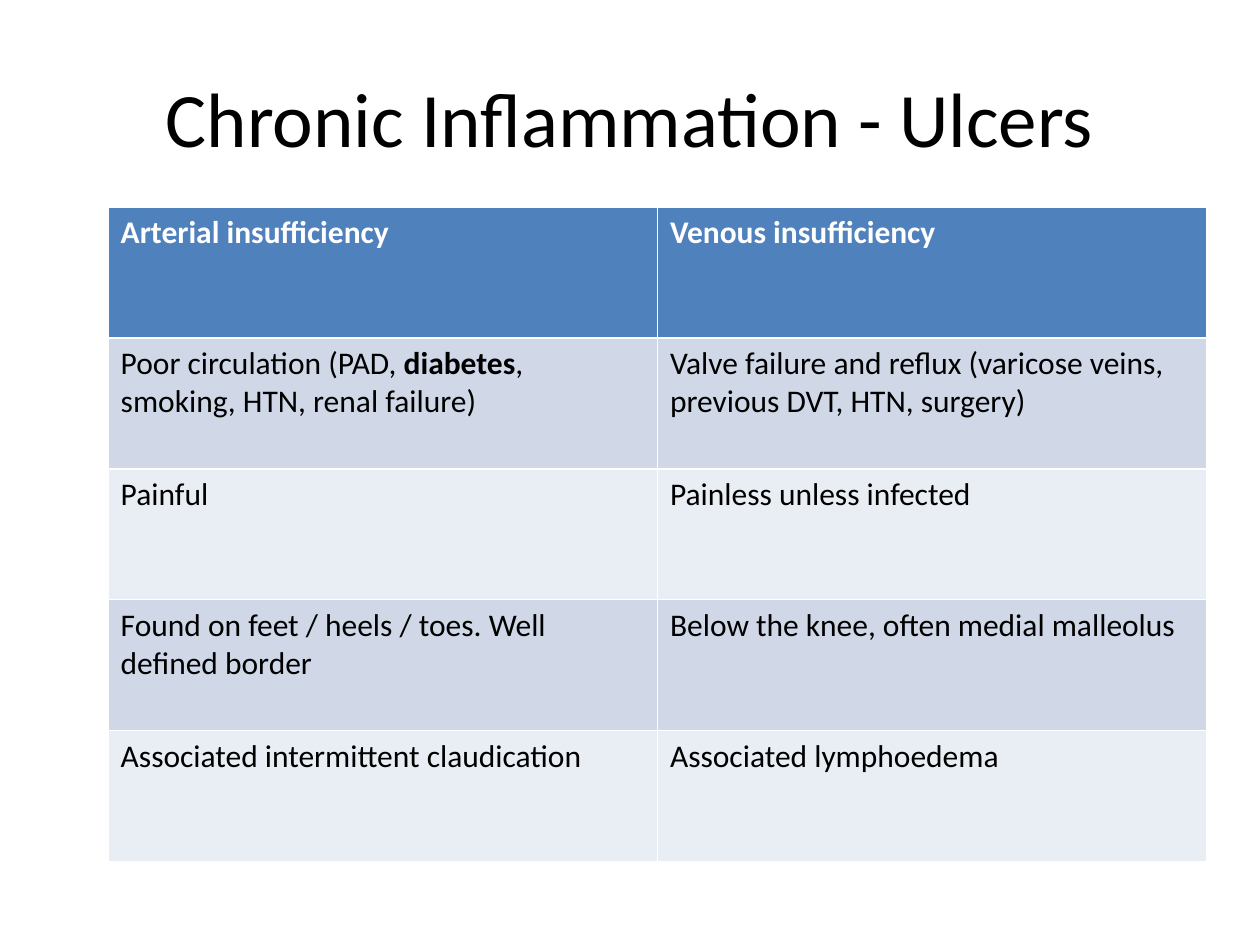
from dataclasses import dataclass

from pptx import Presentation
from pptx.dml.color import RGBColor
from pptx.enum.text import MSO_ANCHOR, PP_ALIGN
from pptx.util import Cm, Pt

CENTER = PP_ALIGN.CENTER
MIDDLE = MSO_ANCHOR.MIDDLE

FONT = "Calibri"
COLORS = {
    "header": "4F81BD",
    "odd": "D0D8E8",
    "even": "E9EDF4",
    "text": "000000",
    "header_text": "FFFFFF",
}


@dataclass
class Span:
    text: str
    bold: bool = False


@dataclass
class Comparison:
    arterial: list[Span]
    venous: list[Span]


HEADER = Comparison([Span("Arterial insufficiency", True)],
                    [Span("Venous insufficiency", True)])
FEATURES = [
    Comparison([Span("Poor circulation (PAD, "), Span("diabetes", True),
                Span(", smoking, HTN, renal failure)")],
               [Span("Valve failure and reflux (varicose veins, "
                     "previous DVT, HTN, surgery)")]),
    Comparison([Span("Painful")], [Span("Painless unless infected")]),
    Comparison([Span("Found on feet / heels / toes. Well defined border")],
               [Span("Below the knee, often medial malleolus")]),
    Comparison([Span("Associated intermittent claudication")],
               [Span("Associated lymphoedema")]),
]


def add_spans(p, spans: list[Span], size: int, color: str) -> None:
    for span in spans:
        r = p.add_run()
        r.text = span.text
        font = {"name": FONT, "size": Pt(size), "bold": span.bold}
        for name, value in font.items():
            setattr(r.font, name, value)
        r.font.color.rgb = RGBColor.from_string(COLORS[color])


def fill_row(row, content: Comparison, fill: str, color: str) -> None:
    for cell, spans in zip(row.cells, (content.arterial, content.venous)):
        cell.fill.solid()
        cell.fill.fore_color.rgb = RGBColor.from_string(COLORS[fill])
        add_spans(cell.text_frame.paragraphs[0], spans, 18, color)


def add_title(s, text: str) -> None:
    sp = s.shapes.title
    place = {"left": Cm(1.27), "top": Cm(0.76),
             "width": Cm(22.86), "height": Cm(3.18)}
    for name, value in place.items():
        setattr(sp, name, value)
    tf = sp.text_frame
    tf.vertical_anchor = MIDDLE
    p = tf.paragraphs[0]
    p.alignment = CENTER
    add_spans(p, [Span(text)], 44, "text")


def add_comparison_table(s) -> None:
    # The default table style supplies the white rules between cells
    count = len(FEATURES) + 1
    table = s.shapes.add_table(count, 2, Cm(2.18), Cm(4.17),
                               Cm(22.15), Cm(2.64 * count)).table
    fill_row(table.rows[0], HEADER, "header", "header_text")
    for i, feature in enumerate(FEATURES, start=1):
        fill_row(table.rows[i], feature, "odd" if i % 2 else "even", "text")


def main() -> None:
    prs = Presentation()
    prs.slide_width, prs.slide_height = Cm(25.4), Cm(19.05)
    title_only = prs.slide_layouts[5]
    s = prs.slides.add_slide(title_only)
    add_title(s, "Chronic Inflammation - Ulcers")
    add_comparison_table(s)
    prs.save("out.pptx")


if __name__ == "__main__":
    main()
